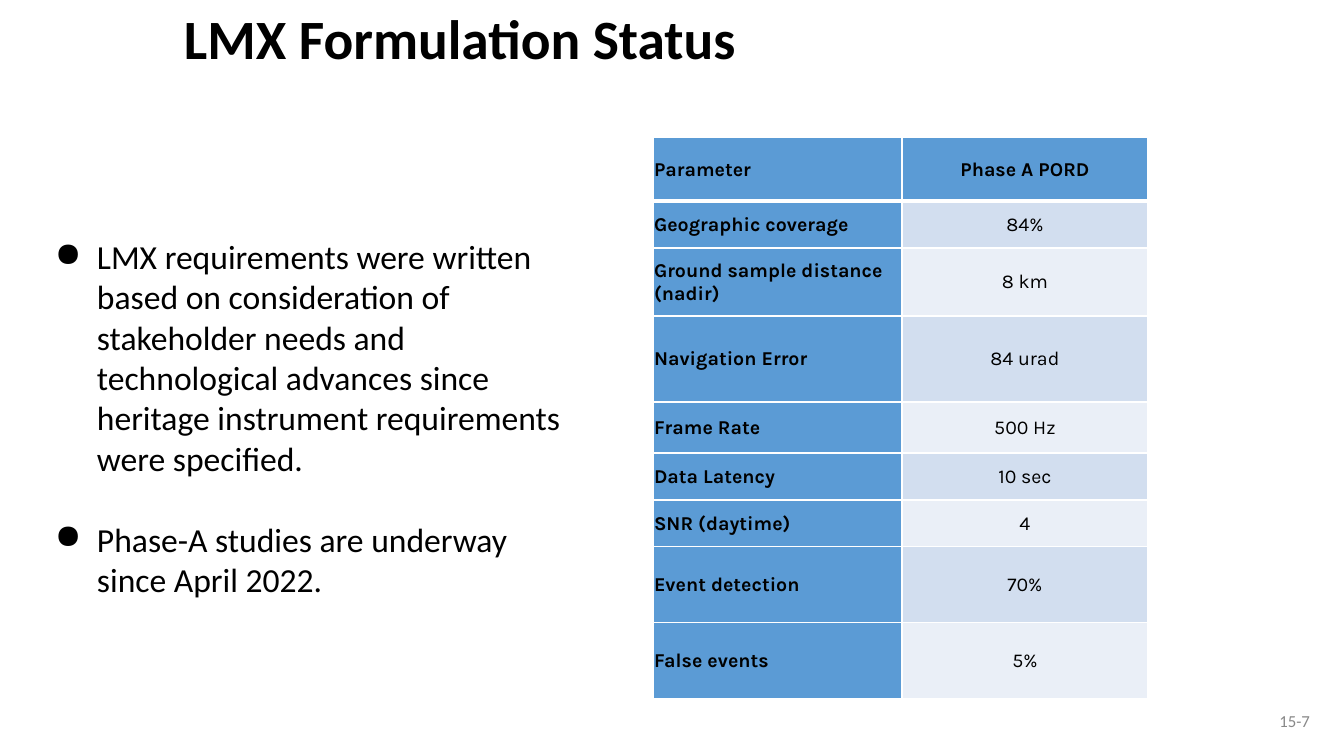
from lxml import etree
from pptx import Presentation
from pptx.dml.color import RGBColor
from pptx.enum.text import MSO_ANCHOR, PP_ALIGN
from pptx.oxml.ns import qn
from pptx.util import Emu, Pt

LEFT, CENTER, RIGHT = PP_ALIGN.LEFT, PP_ALIGN.CENTER, PP_ALIGN.RIGHT
TOP, MIDDLE = MSO_ANCHOR.TOP, MSO_ANCHOR.MIDDLE

EMU_PER_PX = 914400 / 100.8
BLACK, WHITE, GREY = "000000", "FFFFFF", "888888"
HEADER_BLUE, BAND_DARK, BAND_LIGHT = "5B9BD5", "D2DEEF", "EAEFF7"

STATUS_POINTS = [
    "LMX requirements were written based on consideration of stakeholder needs and "
    "technological advances since heritage instrument requirements were specified.",
    "Phase-A studies are underway since April 2022.",
]
# Parameter, value, row height in px
REQUIREMENTS = [
    ("Parameter", "Phase A PORD", 64),
    ("Geographic coverage", "84%", 47),
    ("Ground sample distance (nadir)", "8 km", 68),
    ("Navigation Error", "84 urad", 86),
    ("Frame Rate", "500 Hz", 51),
    ("Data Latency", "10 sec", 47),
    ("SNR (daytime)", "4", 47),
    ("Event detection", "70%", 76),
    ("False events", "5%", 76),
]
COLUMN_WIDTHS = [249, 246]


def px(length):
    return Emu(round(length * EMU_PER_PX))


def rgb(code):
    return RGBColor.from_string(code)


def style(paragraph, size, color=BLACK, bold=False, font="Calibri", align=LEFT):
    paragraph.alignment = align
    paragraph.font.name = font
    paragraph.font.size = Pt(size)
    paragraph.font.bold = bold
    paragraph.font.color.rgb = rgb(color)


def add_text_frame(slide, left, top, width, height, anchor=MIDDLE, inset=5):
    box = slide.shapes.add_textbox(px(left), px(top), px(width), px(height))
    frame = box.text_frame
    frame.word_wrap = True
    frame.vertical_anchor = anchor
    frame.margin_left = frame.margin_right = px(10)
    frame.margin_top = frame.margin_bottom = px(inset)
    return frame


def add_bullet(paragraph):
    properties = paragraph._p.get_or_add_pPr()
    properties.set("marL", str(px(50)))
    properties.set("indent", str(-px(42)))
    color = etree.SubElement(properties, qn("a:buClr"))
    etree.SubElement(color, qn("a:srgbClr"), val=BLACK)
    etree.SubElement(properties, qn("a:buChar"), char="●")


def add_bullet_list(slide, points, left, top, width, height):
    frame = add_text_frame(slide, left, top, width, height, TOP, 10)
    for index, point in enumerate(points):
        paragraph = frame.add_paragraph() if index else frame.paragraphs[0]
        paragraph.text = point
        add_bullet(paragraph)
        if index:
            paragraph.space_before = Pt(29)
        style(paragraph, 24)


def set_borders(cell, top, bottom):
    properties = cell._tc.get_or_add_tcPr()
    edges = [("a:lnL", 1), ("a:lnR", 1), ("a:lnT", top), ("a:lnB", bottom)]
    for position, (edge, width) in enumerate(edges):
        line = etree.Element(qn(edge), w=str(Pt(width)))
        fill = etree.SubElement(line, qn("a:solidFill"))
        etree.SubElement(fill, qn("a:srgbClr"), val=WHITE)
        properties.insert(position, line)


def fill_cell(cell, text, row, column):
    is_label = row == 0 or column == 0
    cell.text = text
    cell.vertical_anchor = MIDDLE
    cell.margin_left = cell.margin_right = cell.margin_top = px(1)
    cell.margin_bottom = 0
    band = BAND_DARK if row % 2 else BAND_LIGHT
    cell.fill.solid()
    cell.fill.fore_color.rgb = rgb(HEADER_BLUE if is_label else band)
    set_borders(cell, top=3 if row == 1 else 1, bottom=3 if row == 0 else 1)
    style(cell.text_frame.paragraphs[0], 14, bold=is_label, font="Karla",
          align=CENTER if column else LEFT)


def add_requirements_table(slide, left, top):
    total_height = sum(height for _, _, height in REQUIREMENTS)
    table = slide.shapes.add_table(
        len(REQUIREMENTS), len(COLUMN_WIDTHS), px(left), px(top),
        px(sum(COLUMN_WIDTHS)), px(total_height)).table
    for column, width in zip(table.columns, COLUMN_WIDTHS):
        column.width = px(width)
    for row, (parameter, value, height) in enumerate(REQUIREMENTS):
        table.rows[row].height = px(height)
        for column, text in enumerate((parameter, value)):
            fill_cell(table.cell(row, column), text, row, column)


def main():
    deck = Presentation()
    deck.slide_width, deck.slide_height = px(1344), px(756)
    slide = deck.slides.add_slide(deck.slide_layouts[6])

    # Title
    title = add_text_frame(slide, 174, 20, 823, 43).paragraphs[0]
    title.text = "LMX Formulation Status"
    title.line_spacing = 0.9
    style(title, 39.6, bold=True)

    # Page number
    page_number = add_text_frame(slide, 1018, 701, 302, 40).paragraphs[0]
    page_number.text = "15-7"
    style(page_number, 12, GREY, align=RIGHT)

    # Status points and requirements
    add_bullet_list(slide, STATUS_POINTS, 37, 226, 557, 387)
    add_requirements_table(slide, 653, 137)

    deck.save("out.pptx")


if __name__ == "__main__":
    main()
